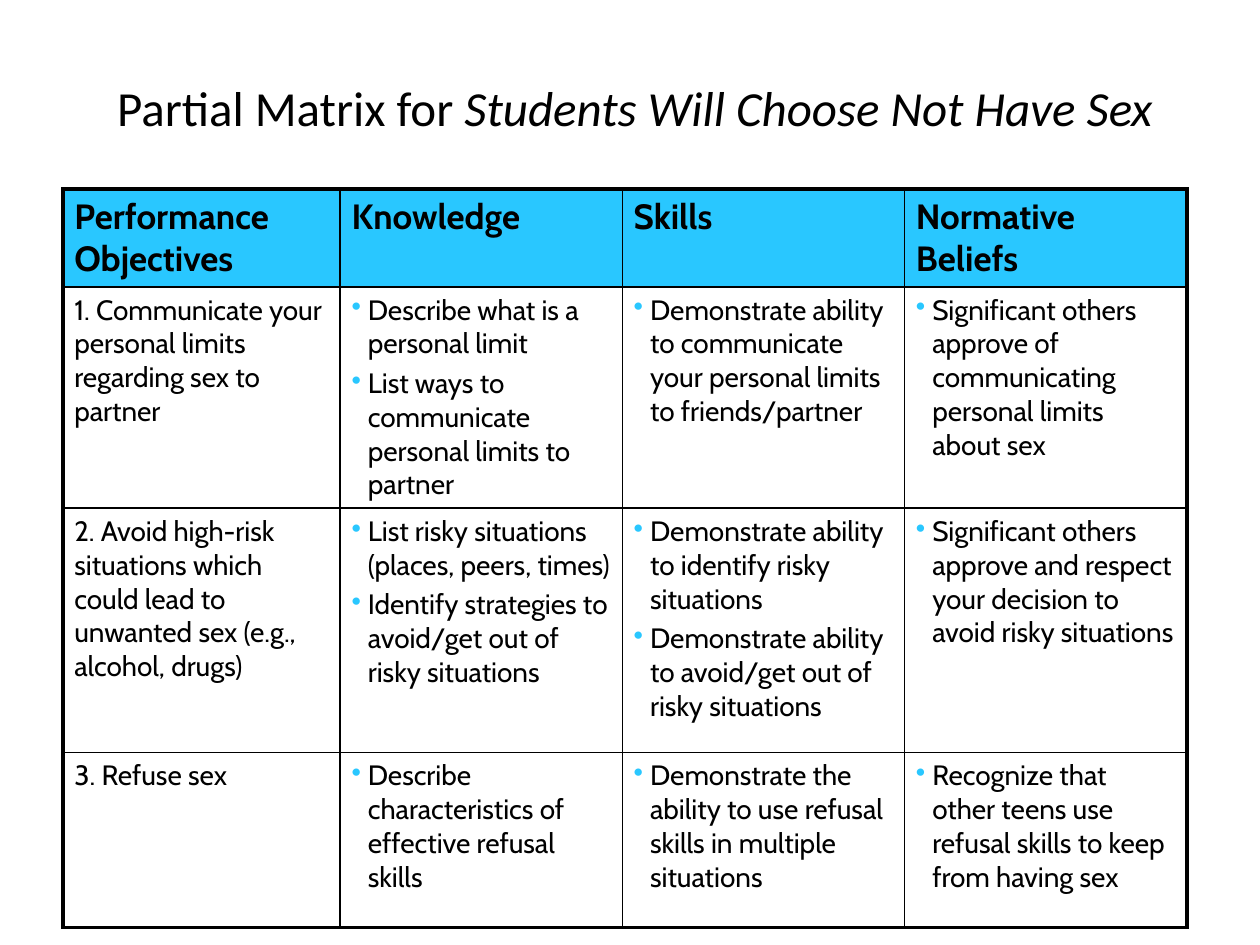
from dataclasses import dataclass

from lxml import etree
from pptx import Presentation
from pptx.dml.color import RGBColor
from pptx.enum.text import MSO_ANCHOR, PP_ALIGN
from pptx.oxml.ns import qn
from pptx.util import Inches, Pt

LEFT = PP_ALIGN.LEFT
TOP = MSO_ANCHOR.TOP
MIDDLE = MSO_ANCHOR.MIDDLE
TITLE_ONLY = 5


@dataclass(frozen=True)
class Theme:
    ink: str = "000000"
    accent: str = "29C7FF"
    title_font: str = "Calibri"
    table_font: str = "Cabin"
    title_size: float = 28
    header_size: float = 20
    body_size: float = 16
    outer_line: float = 2.25
    inner_line: float = 1
    space_ratio: float = 0.2


@dataclass(frozen=True)
class Objective:
    name: str
    knowledge: tuple[str, ...]
    skills: tuple[str, ...]
    beliefs: tuple[str, ...]


THEME = Theme()
HEADERS = ("Performance Objectives", "Knowledge", "Skills", "Normative Beliefs")
COLUMN_WIDTHS = (2.2, 2.24, 2.24, 2.24)
ROW_HEIGHTS = (0.74, 1.68, 1.94, 1.39)
OBJECTIVES = (
    Objective(
        "1. Communicate your personal limits regarding sex to partner",
        ("Describe what is a personal limit",
         "List ways to communicate personal limits to partner"),
        ("Demonstrate ability to communicate your personal limits to friends/partner",),
        ("Significant others approve of communicating personal limits about sex",),
    ),
    Objective(
        "2. Avoid high-risk situations which could lead to unwanted sex "
        "(e.g., alcohol, drugs)",
        ("List risky situations (places, peers, times)",
         "Identify strategies to avoid/get out of risky situations"),
        ("Demonstrate ability to identify risky situations",
         "Demonstrate ability to avoid/get out of risky situations"),
        ("Significant others approve and respect your decision to avoid risky situations",),
    ),
    Objective(
        "3. Refuse sex",
        ("Describe characteristics of effective refusal skills",),
        ("Demonstrate the ability to use refusal skills in multiple situations",),
        ("Recognize that other teens use refusal skills to keep from having sex",),
    ),
)


def add_span(para, text: str, *, font: str, size: float,
             bold: bool = False, italic: bool = False) -> None:
    span = para.add_run()
    span.text = text
    span.font.name = font
    span.font.size = Pt(size)
    span.font.bold = bold
    span.font.italic = italic
    span.font.color.rgb = RGBColor.from_string(THEME.ink)


def add_bullet(para) -> None:
    properties = para._p.get_or_add_pPr()
    properties.set("marL", str(Inches(0.13)))
    properties.set("indent", str(-Inches(0.13)))
    colour = etree.SubElement(properties, qn("a:buClr"))
    etree.SubElement(colour, qn("a:srgbClr"), val=THEME.accent)
    etree.SubElement(properties, qn("a:buChar"), char="•")


def set_border(cell, side: str, width: float) -> None:
    properties = cell._tc.get_or_add_tcPr()
    line = etree.SubElement(properties, qn(f"a:ln{side}"), w=str(Pt(width)))
    fill = etree.SubElement(line, qn("a:solidFill"))
    etree.SubElement(fill, qn("a:srgbClr"), val=THEME.ink)


def fill_cell(cell, texts: tuple[str, ...], *, size: float,
              bold: bool = False, bullets: bool = False) -> None:
    cell.margin_left = cell.margin_right = Inches(0.09)
    cell.margin_top = cell.margin_bottom = Inches(0.05)
    cell.vertical_anchor = TOP
    frame = cell.text_frame
    for index, text in enumerate(texts):
        para = frame.add_paragraph() if index else frame.paragraphs[0]
        para.alignment = LEFT
        para.space_before = Pt(size * THEME.space_ratio)
        if bullets:
            add_bullet(para)
        add_span(para, text, font=THEME.table_font, size=size, bold=bold)


def add_title(page) -> None:
    title = page.shapes.title
    title.left, title.top = Inches(0.83), Inches(0.42)
    title.width, title.height = Inches(8.52), Inches(0.92)
    frame = title.text_frame
    frame.word_wrap = True
    frame.vertical_anchor = MIDDLE
    para = frame.paragraphs[0]
    para.alignment = LEFT
    para.line_spacing = 0.9
    for text, italic in (("Partial Matrix for ", False),
                         ("Students Will Choose Not Have Sex", True)):
        add_span(para, text, font=THEME.title_font, size=THEME.title_size, italic=italic)


def add_matrix(page) -> None:
    row_count, column_count = len(ROW_HEIGHTS), len(COLUMN_WIDTHS)
    table = page.shapes.add_table(
        row_count, column_count, Inches(0.5), Inches(1.5),
        Inches(sum(COLUMN_WIDTHS)), Inches(sum(ROW_HEIGHTS))).table
    table.horz_banding = False
    table.first_row = False
    for column, width in zip(table.columns, COLUMN_WIDTHS):
        column.width = Inches(width)
    for row, height in zip(table.rows, ROW_HEIGHTS):
        row.height = Inches(height)

    # Header and objective texts
    for column, header in enumerate(HEADERS):
        fill_cell(table.cell(0, column), (header,), size=THEME.header_size, bold=True)
    for row, item in enumerate(OBJECTIVES, start=1):
        columns = ((item.name,), item.knowledge, item.skills, item.beliefs)
        for column, texts in enumerate(columns):
            fill_cell(table.cell(row, column), texts,
                      size=THEME.body_size, bullets=column > 0)

    # Heavy outer frame, thin inner lines, coloured header
    for row in range(row_count):
        for column in range(column_count):
            cell = table.cell(row, column)
            outer_sides = {"L": column == 0, "R": column == column_count - 1,
                           "T": row == 0, "B": row == row_count - 1}
            for side, is_outer in outer_sides.items():
                set_border(cell, side, THEME.outer_line if is_outer else THEME.inner_line)
            if row == 0:
                cell.fill.solid()
                cell.fill.fore_color.rgb = RGBColor.from_string(THEME.accent)
            else:
                cell.fill.background()


def main() -> None:
    deck = Presentation()
    deck.slide_width, deck.slide_height = Inches(10), Inches(7.5)
    page = deck.slides.add_slide(deck.slide_layouts[TITLE_ONLY])
    add_title(page)
    add_matrix(page)
    deck.save("out.pptx")


if __name__ == "__main__":
    main()
